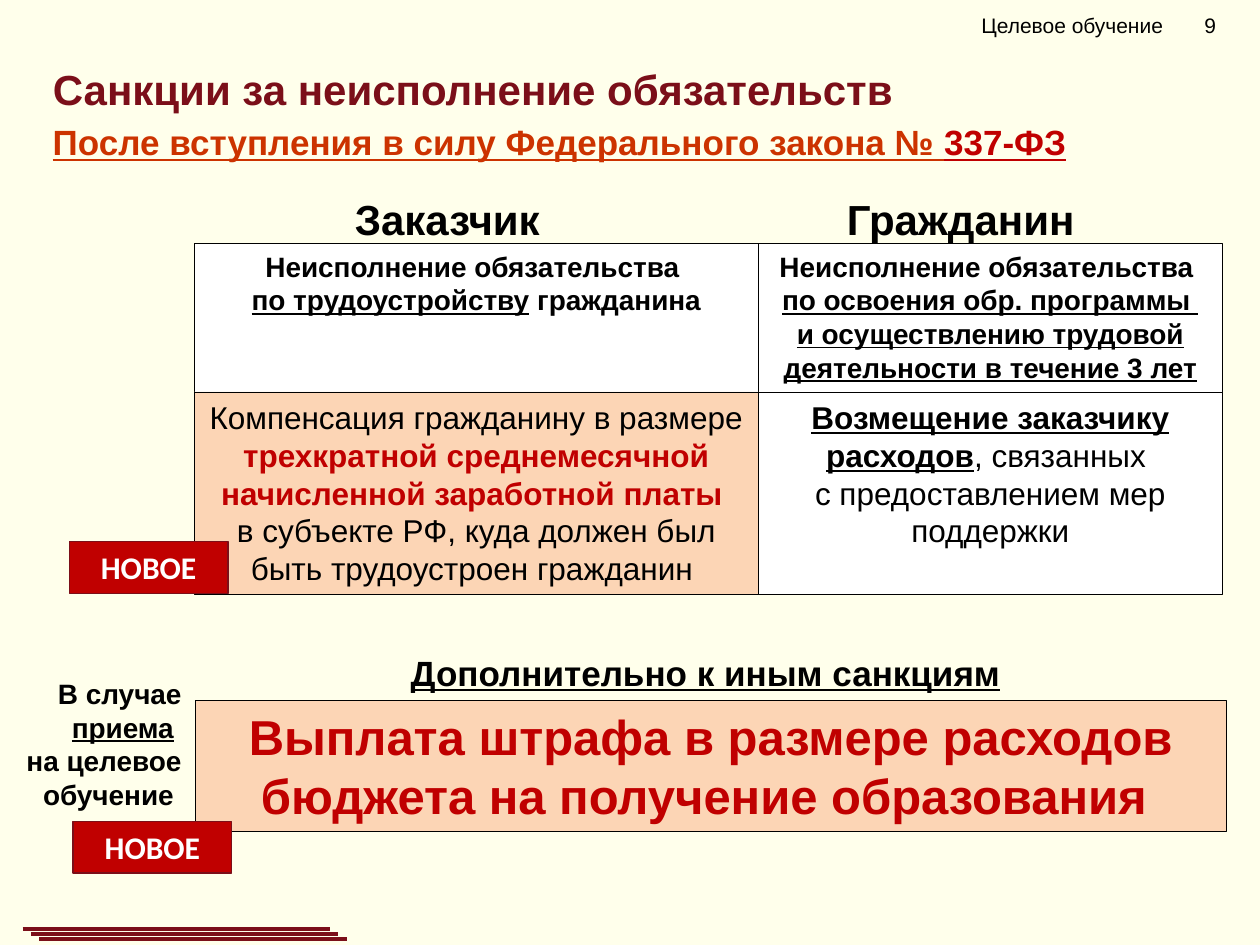
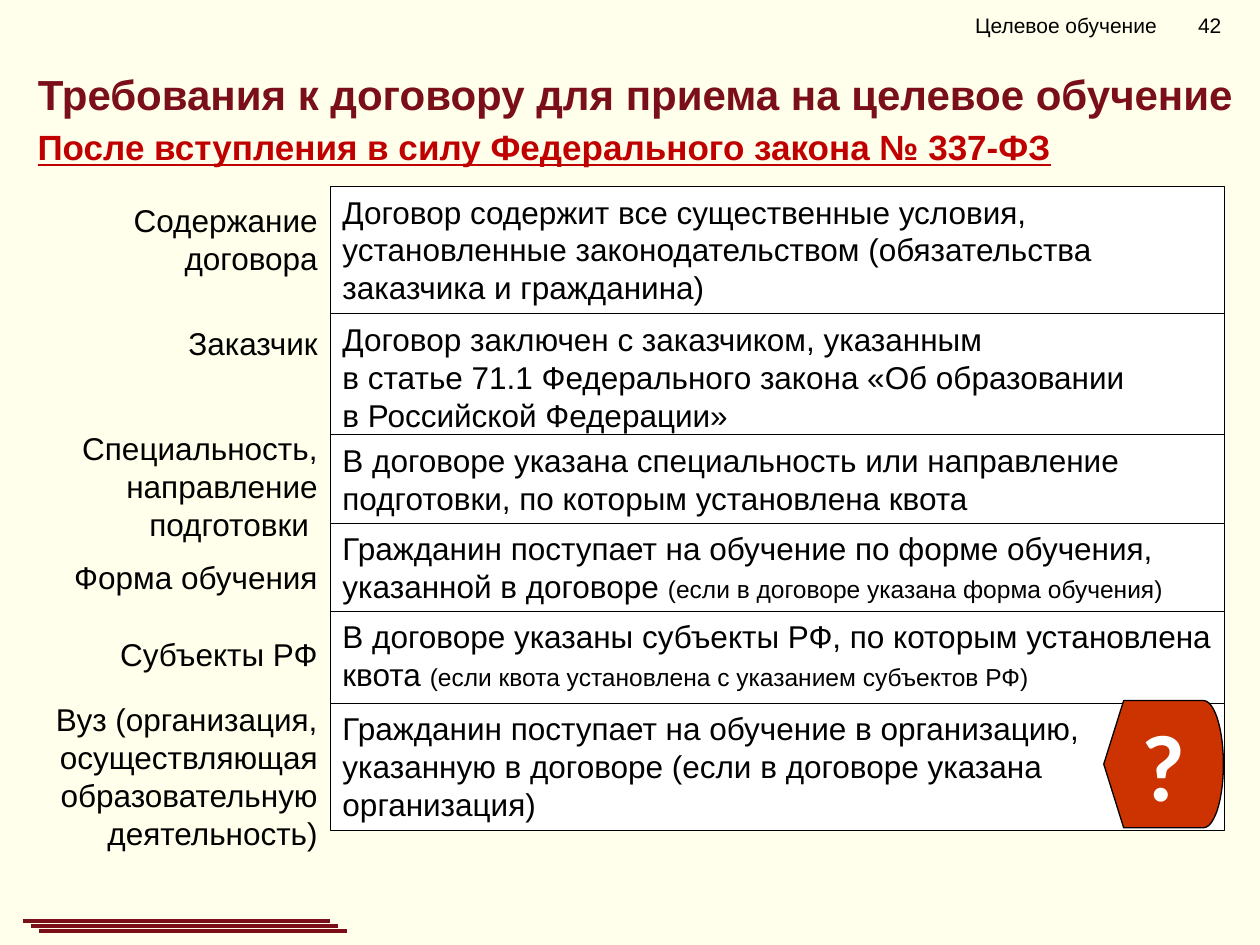
import lxml.etree
import pptx
import pptx.dml.color
import pptx.enum.shapes
import pptx.enum.text
import pptx.oxml.ns
import pptx.util

Inches = pptx.util.Inches
ALIGN = pptx.enum.text.PP_ALIGN
ANCHOR = pptx.enum.text.MSO_ANCHOR
FORM = pptx.enum.shapes.MSO_SHAPE

CREAM, WHITE, BLACK = "FFFFEB", "FFFFFF", "000000"
WINE, RED, RUST, PEACH = "7B0F19", "C00000", "CC3300", "FCD5B5"
BOLD = {"bold": True}
PLAIN = {"bold": False, "underline": False}
LINK = {"bold": True, "underline": True}
STRESS = {"bold": True, "color": RED}
SMALL = {"size": 14}
LAW = "После вступления в силу Федерального закона № "


def paint(target, color):
    target.rgb = pptx.dml.color.RGBColor.from_string(color)


def style(font, values):
    for name, value in values.items():
        if name == "color":
            paint(font.color, value)
        elif name == "size":
            font.size = pptx.util.Pt(value)
        else:
            setattr(font, name, value)


def write(shape, paras, look, align=ALIGN.CENTER, anchor=ANCHOR.TOP):
    frame = shape.text_frame
    setup = {"word_wrap": True, "vertical_anchor": anchor,
             "auto_size": pptx.enum.text.MSO_AUTO_SIZE.NONE,
             "margin_left": Inches(0.1), "margin_right": Inches(0.1),
             "margin_top": Inches(0.05), "margin_bottom": Inches(0.05)}
    for name, value in setup.items():
        setattr(frame, name, value)
    base = {"name": "Arial", "color": BLACK, **look}
    for index, runs in enumerate(paras):
        para = frame.add_paragraph() if index else frame.paragraphs[0]
        para.alignment = align
        for words, change in runs:
            run = para.add_run()
            run.text = words
            style(run.font, {**base, **change})


def label(slide, box, paras, look, align=ALIGN.CENTER, anchor=ANCHOR.TOP):
    shape = slide.shapes.add_textbox(*map(Inches, box))
    write(shape, paras, look, align, anchor)


def panel(slide, box, paras, look, fill=WHITE, edge=BLACK, width=0.25,
          form=FORM.RECTANGLE, align=ALIGN.CENTER):
    shape = slide.shapes.add_shape(form, *map(Inches, box))
    shape.shadow.inherit = False
    shape.fill.solid()
    paint(shape.fill.fore_color, fill)
    paint(shape.line.color, edge)
    shape.line.width = pptx.util.Pt(width)
    write(shape, paras, look, align)


def badge(slide, left, top):
    panel(slide, (left, top, 1.26, 0.41), [[("НОВОЕ", {})]],
          {"name": "Calibri", "size": 18, "bold": True, "color": WHITE},
          RED, WINE, 0.75)


def head(slide, box, title, law):
    left, top, width, height = box
    shape = slide.shapes.title
    for name, value in zip(("left", "top", "width", "height"), box):
        setattr(shape, name, Inches(value))
    write(shape, [[(title, {})]], {"size": 24, "bold": True, "color": WINE}, ALIGN.LEFT)
    label(slide, (left, top + height - 0.01, 8.9, 0.44), [law],
          {"size": 20, "color": RED, **LINK}, ALIGN.LEFT)


def mark(slide, left, number):
    for start, width, words in ((left, 1.75, "Целевое обучение"),
                                (left + 1.77, 0.55, number)):
        label(slide, (start, 0, width, 0.4), [[(words, {})]], {"size": 12},
              ALIGN.LEFT, ANCHOR.MIDDLE)


def stripes(slide, left, top):
    for step in range(3):
        x, y = left + 0.065 * step, top + 0.04 * step
        line = slide.shapes.add_connector(
            pptx.enum.shapes.MSO_CONNECTOR.STRAIGHT,
            Inches(x), Inches(y), Inches(x + 2.44), Inches(y))
        paint(line.line.color, WINE)
        line.line.width = pptx.util.Pt(2.25)
        lxml.etree.SubElement(line._element.spPr, pptx.oxml.ns.qn("a:effectLst"))


def duties(slide, left, top):
    cells = [
        [[[("Неисполнение обязательства ", BOLD)],
          [("по трудоустройству", LINK), (" гражданина", BOLD)]],
         [[("Неисполнение обязательства ", BOLD)],
          [("по освоения обр. программы ", LINK)],
          [("и осуществлению трудовой деятельности в течение 3 лет", LINK)]]],
        [[[("Компенсация гражданину в размере ", PLAIN),
           ("трехкратной среднемесячной начисленной заработной платы ", STRESS)],
          [("в субъекте РФ, куда должен был быть трудоустроен гражданин ", PLAIN)]],
         [[("Возмещение заказчику расходов", LINK), (", связанных ", PLAIN)],
          [("с предоставлением мер поддержки", PLAIN)]]],
    ]
    for name, shift, width in (("Заказчик", 0, 4.02), ("Гражданин", 4, 4.17)):
        label(slide, (left + shift, top, width, 0.5), [[(name, BOLD)]], {"size": 24})
    y = top + 0.44
    for row, height, size, fills in zip(cells, (1.18, 1.61), (16, 18),
                                        ((WHITE, WHITE), (PEACH, WHITE))):
        x = left
        for paras, width, fill in zip(row, (4.48, 3.68), fills):
            panel(slide, (x, y, width, height), paras, {"size": size}, fill)
            x += width
        y += height


def fine(slide, left, top):
    label(slide, (left - 0.04, top, 8.18, 0.44),
          [[("Дополнительно к иным санкциям", LINK)]], {"size": 20})
    panel(slide, (left, top + 0.44, 8.18, 1.04),
          [[("Выплата штрафа в размере расходов бюджета на получение образования ",
             STRESS)]], {"size": 28}, PEACH)
    label(slide, (0, top + 0.2, left - 0.01, 1.18),
          [[("В случае ", BOLD), ("приема", LINK), (" ", BOLD)],
           [("на целевое обучение ", BOLD)]], {"size": 16}, ALIGN.RIGHT)


def terms(slide, left, top, width):
    rows = [
        ("Содержание договора", 0.07, 1.01,
         [[("Договор содержит все существенные условия, установленные законодательством "
            "(обязательства заказчика и гражданина)", {})]]),
        ("Заказчик", 0.03, 0.96,
         [[("Договор заключен с заказчиком, указанным", {})],
          [("в статье 71.1 Федерального закона «Об образовании", {})],
          [("в Российской Федерации»", {})]]),
        ("Специальность, направление подготовки ", -0.09, 0.7,
         [[("В договоре указана специальность или направление подготовки, "
            "по которым установлена квота", {})]]),
        ("Форма обучения", 0.23, 0.7,
         [[("Гражданин поступает на обучение по форме обучения, указанной в договоре ", {}),
           ("(если в договоре указана форма обучения)", SMALL)]]),
        ("Субъекты РФ", 0.14, 0.73,
         [[("В договоре указаны субъекты РФ, по которым установлена квота ", {}),
           ("(если квота установлена с указанием субъектов РФ)", SMALL)]]),
        ("Вуз (организация, осуществляющая образовательную деятельность)", -0.07, 1.01,
         [[("Гражданин поступает на обучение в организацию, указанную в договоре "
            "(если в договоре указана организация)", {})]]),
    ]
    look = {"size": 18}
    y = top
    for name, shift, height, paras in rows:
        panel(slide, (left, y, width, height), paras, look, align=ALIGN.LEFT)
        label(slide, (0, y + shift, left, 1), [[(name, {})]], look, ALIGN.RIGHT)
        y += height
    panel(slide, (left + width - 0.96, y - 1.03, 0.95, 1.01), [[("?", {})]],
          {"name": "Calibri", "size": 54, "bold": True, "color": WHITE},
          RUST, BLACK, 0.75, FORM.FLOWCHART_DISPLAY)


def claims(slide):
    head(slide, (0.32, 0.45, 9.29, 0.47), "Санкции за неисполнение обязательств",
         [(LAW, {"color": RUST}), ("337-ФЗ", {})])
    duties(slide, 1.54, 1.49)
    fine(slide, 1.55, 5.12)
    badge(slide, 0.58, 6.52)
    badge(slide, 0.55, 4.3)
    mark(slide, 7.69, "9")
    stripes(slide, 0.18, 7.37)


def needs(slide):
    head(slide, (0.2, 0.49, 9.8, 0.47),
         "Требования к договору для приема на целевое обучение",
         [(LAW + "337-ФЗ", {})])
    terms(slide, 2.62, 1.48, 7.1)
    mark(slide, 7.64, "42")
    stripes(slide, 0.18, 7.31)


def main():
    deck = pptx.Presentation()
    deck.slide_width, deck.slide_height = Inches(10), Inches(7.5)
    back = deck.slide_master.background.fill
    back.solid()
    paint(back.fore_color, CREAM)
    for build in (claims, needs):
        build(deck.slides.add_slide(deck.slide_layouts[5]))
    deck.save("out.pptx")


if __name__ == "__main__":
    main()
